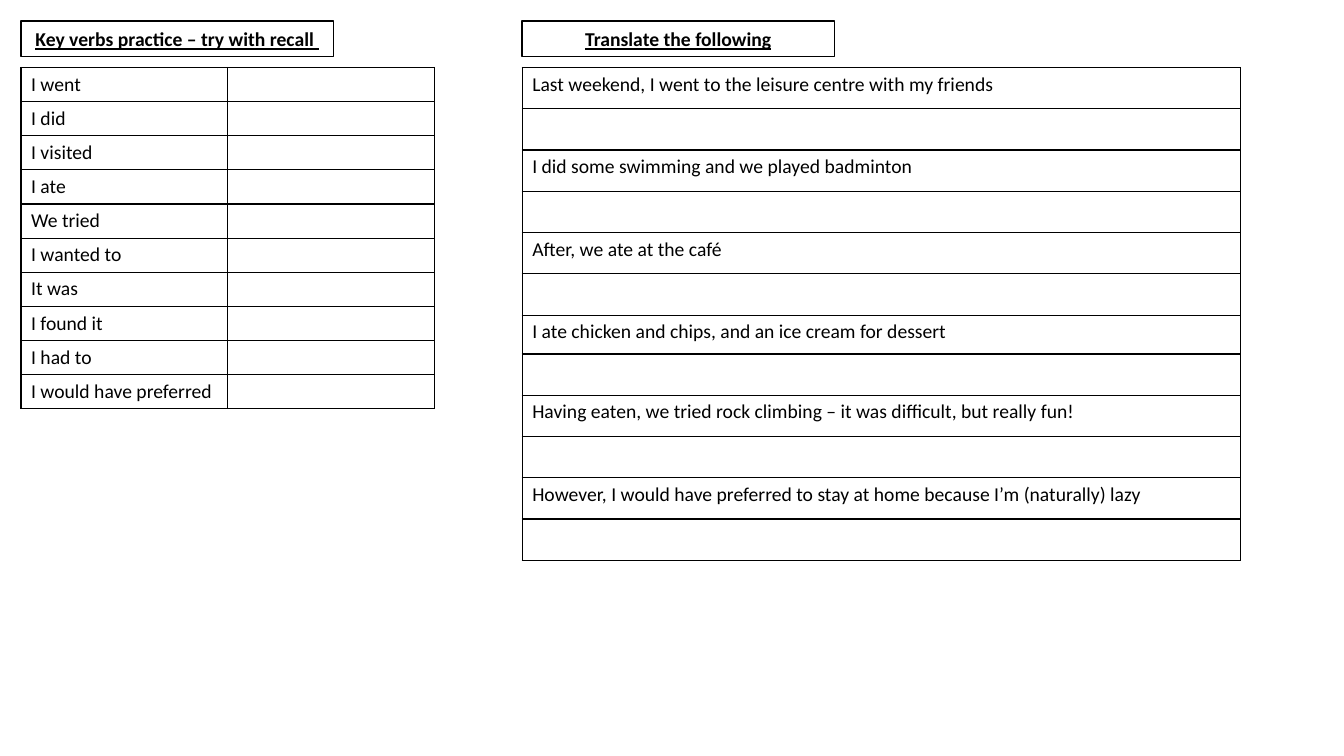
import pptx
import pptx.dml.color
import pptx.enum.shapes
import pptx.enum.text
import pptx.oxml.ns
import pptx.util
from lxml import etree
from pptx.util import Cm

FONT = "Calibri"
SIZE = 14
BLACK = "000000"
WHITE = "FFFFFF"
LEFT, RIGHT = 0.53, 13.16
TOP = 1.7

VERBS = [
    "I went", "I did", "I visited", "I ate", "We tried",
    "I wanted to", "It was", "I found it", "I had to",
    "I would have preferred",
]
LINES = [
    "Last weekend, I went to the leisure centre with my friends",
    "I did some swimming and we played badminton",
    "After, we ate at the café",
    "I ate chicken and chips, and an ice cream for dessert",
    "Having eaten, we tried rock climbing – it was difficult, but really fun!",
    "However, I would have preferred to stay at home because I’m (naturally) lazy",
]


def color(text):
    return pptx.dml.color.RGBColor.from_string(text)


def node(parent, tag, **attrs):
    return etree.SubElement(parent, pptx.oxml.ns.qn(tag), **attrs)


def add_run(para, text, bold=False):
    run = para.add_run()
    run.text = text
    font = run.font
    font.name = FONT
    font.size = pptx.util.Pt(SIZE)
    font.bold = bold
    font.underline = bold
    font.color.rgb = color(BLACK)


def add_title(slide, left, text):
    box = slide.shapes.add_shape(
        pptx.enum.shapes.MSO_SHAPE.RECTANGLE,
        Cm(left), Cm(0.53), Cm(7.87), Cm(0.89))
    box.shadow.inherit = False
    box.fill.solid()
    box.fill.fore_color.rgb = color(WHITE)
    box.line.color.rgb = color(BLACK)
    box.line.width = pptx.util.Pt(1)
    frame = box.text_frame
    frame.word_wrap = True
    frame.vertical_anchor = pptx.enum.text.MSO_ANCHOR.MIDDLE
    para = frame.paragraphs[0]
    para.alignment = pptx.enum.text.PP_ALIGN.CENTER
    add_run(para, text, bold=True)


def add_edges(cell):
    props = cell._tc.get_or_add_tcPr()
    for side in ("L", "R", "T", "B"):
        edge = node(props, f"a:ln{side}", w=str(pptx.util.Pt(1)))
        fill = node(edge, "a:solidFill")
        node(fill, "a:srgbClr", val=BLACK)


def fill_cell(cell, text):
    """Style a cell; an empty one keeps the text size so its row stays low."""
    add_edges(cell)
    cell.fill.background()
    para = cell.text_frame.paragraphs[0]
    if text:
        add_run(para, text)
    else:
        node(para._p, "a:endParaRPr", sz=str(SIZE * 100))


def add_grid(slide, left, widths, heights, rows):
    frame = slide.shapes.add_table(
        len(rows), len(widths), Cm(left), Cm(TOP),
        Cm(sum(widths)), Cm(sum(heights)))
    table = frame.table
    table.first_row = False
    table.horz_banding = False
    for col, width in zip(table.columns, widths):
        col.width = Cm(width)
    for row, height, texts in zip(table.rows, heights, rows):
        row.height = Cm(height)
        for cell, text in zip(row.cells, texts):
            fill_cell(cell, text)


def main():
    deck = pptx.Presentation()
    deck.slide_width = Cm(33.87)
    deck.slide_height = Cm(19.05)
    slide = deck.slides.add_slide(deck.slide_layouts[6])

    add_title(slide, LEFT, "Key verbs practice – try with recall ")
    verbs = [(verb, "") for verb in VERBS]
    add_grid(slide, LEFT, [5.21, 5.21], [0.86] * len(verbs), verbs)

    lines = [(text,) for line in LINES for text in (line, "")]
    heights = [1.04] * len(lines)
    heights[6] = 0.98
    add_grid(slide, RIGHT, [18.11], heights, lines)
    add_title(slide, RIGHT, "Translate the following")

    deck.save("out.pptx")


if __name__ == "__main__":
    main()
